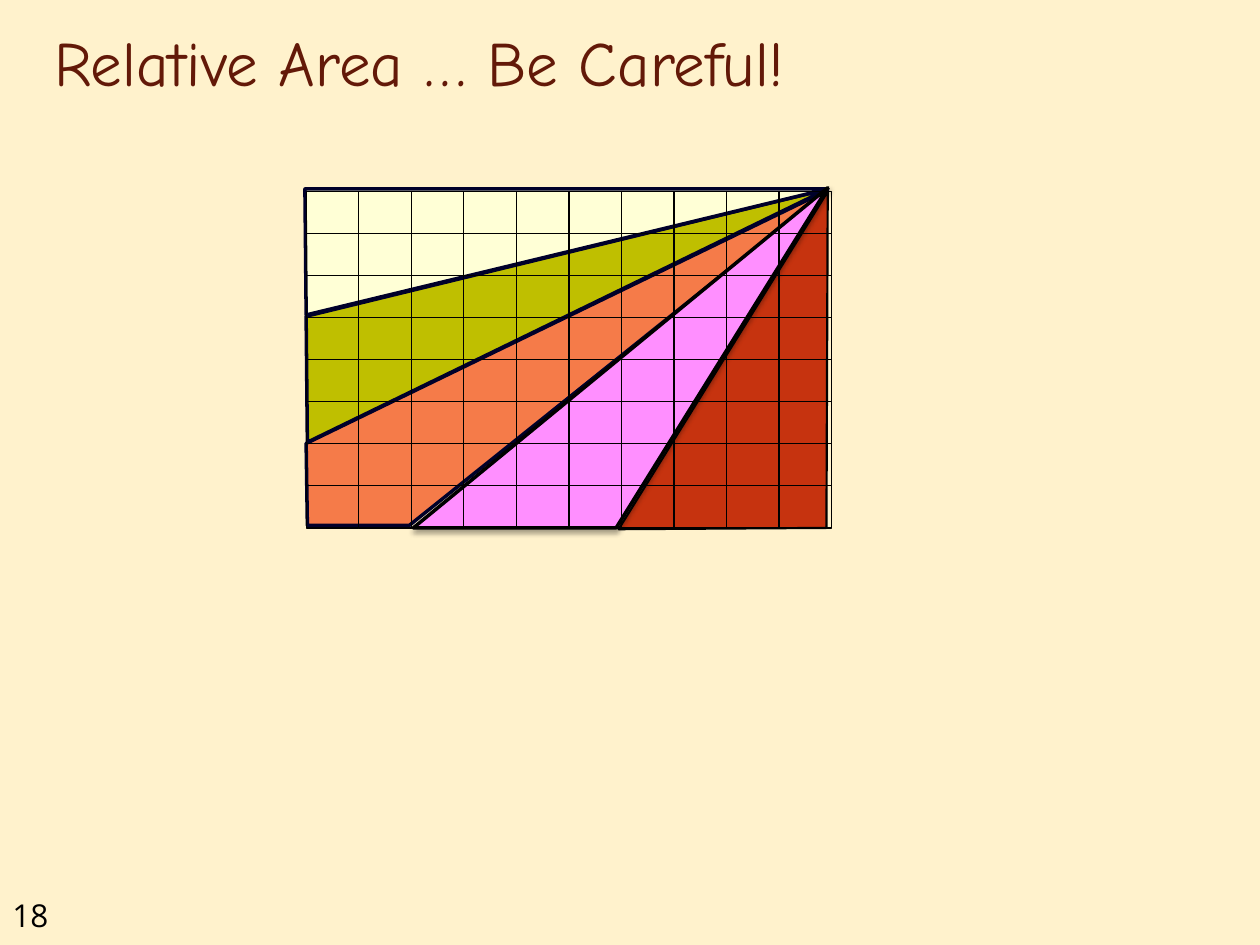
from lxml import etree
from pptx import Presentation
from pptx import util as u
from pptx.dml.color import RGBColor
from pptx.enum import shapes, text
from pptx.oxml import ns

Inches, Pt = u.Inches, u.Pt

COLORS = {
    "background": "FFF2CC", "title": "631908", "black": "000000", "navy": "00002A",
    "orange": "F57B49", "olive": "BFBF00", "cream": "FFFFD6",
    "red": "C6330F", "pink": "FF8FFF",
}
COLS, ROWS = 10, 8

# Pieces from back to front: fill, line, line width, corners in inches from the area's corner
PIECES = [
    ("orange", "navy", 2, [(0.83, 2.68), (4.15, 0.02), (0.01, 2.03), (0.02, 2.68)]),
    ("olive", "navy", 2, [(0.02, 2.02), (4.15, 0.01), (0.01, 1.02)]),
    ("cream", "navy", 2, [(0, 0.01), (4.15, 0.01), (0.01, 1.01)]),
    ("red", "black", 1.25, [(2.49, 2.71), (4.15, 0.03), (4.14, 2.70)]),
    ("pink", "black", 2, [(4.15, 0), (0.86, 2.70), (2.47, 2.70)]),
]


def rgb(name):
    return RGBColor.from_string(COLORS[name])


def write(tf, words, size=18, font="Open Sans", color="black", anchor=text.MSO_ANCHOR.TOP):
    tf.word_wrap = True
    tf.auto_size = text.MSO_AUTO_SIZE.NONE
    tf.vertical_anchor = anchor
    tf.margin_left = tf.margin_right = Inches(0.1)
    tf.margin_top = tf.margin_bottom = Inches(0.05)
    p = tf.paragraphs[0]
    p.alignment = text.PP_ALIGN.LEFT
    r = p.add_run()
    r.text = words
    r.font.size, r.font.name = Pt(size), font
    r.font.color.rgb = rgb(color)


def add_title(s, left, top, width, height):
    sp = s.shapes.title
    sp.left, sp.top, sp.width, sp.height = map(Inches, (left, top, width, height))
    write(sp.text_frame, "Relative Area … Be Careful!", size=36, font="Comic Neue",
          color="title", anchor=text.MSO_ANCHOR.BOTTOM)


def add_page_number(s, left, top, width, height):
    sp = s.shapes.add_textbox(*map(Inches, (left, top, width, height)))
    write(sp.text_frame, "18")


def add_soft_shadow(sp):
    effects = sp._element.spPr.find(ns.qn("a:effectLst"))
    shadow = etree.SubElement(effects, ns.qn("a:outerShdw"), blurRad=str(Pt(3.1)),
                              dist=str(Pt(1.8)), dir="5400000", rotWithShape="0")
    color = etree.SubElement(shadow, ns.qn("a:srgbClr"), val=COLORS["black"])
    etree.SubElement(color, ns.qn("a:alpha"), val="35000")


def add_pieces(s, left, top):
    for fill, line, width, corners in PIECES:
        points = [(Inches(left + x), Inches(top + y)) for x, y in corners]
        builder = s.shapes.build_freeform(*points[0])
        builder.add_line_segments(points[1:], close=True)
        sp = builder.convert_to_shape()
        sp.shadow.inherit = False
        sp.fill.solid()
        sp.fill.fore_color.rgb = rgb(fill)
        sp.line.color.rgb = rgb(line)
        sp.line.width = Pt(width)
        if fill == "pink":
            add_soft_shadow(sp)


def add_grid(s, left, top, width, height):
    group = s.shapes.add_group_shape()
    w, h = width / COLS, height / ROWS
    for row in reversed(range(ROWS)):
        for col in range(COLS):
            box = (left + col * w, top + row * h, w, h)
            sp = group.shapes.add_shape(shapes.MSO_SHAPE.RECTANGLE, *map(Inches, box))
            sp.shadow.inherit = False
            sp.fill.background()
            sp.line.color.rgb = rgb("black")
            sp.line.width = Pt(0.75)


def main():
    prs = Presentation()
    prs.slide_width, prs.slide_height = Inches(10), Inches(7.5)
    s = prs.slides.add_slide(prs.slide_layouts[5])
    s.background.fill.solid()
    s.background.fill.fore_color.rgb = rgb("background")

    add_page_number(s, 0, 7.06, 0.75, 0.4)
    add_title(s, 0.33, 0.17, 8.5, 0.67)
    # Rectangle cut into pieces, with the unit grid on top
    add_pieces(s, 2.42, 1.49)
    add_grid(s, 2.43, 1.52, 4.17, 2.67)

    prs.save("out.pptx")


if __name__ == "__main__":
    main()
